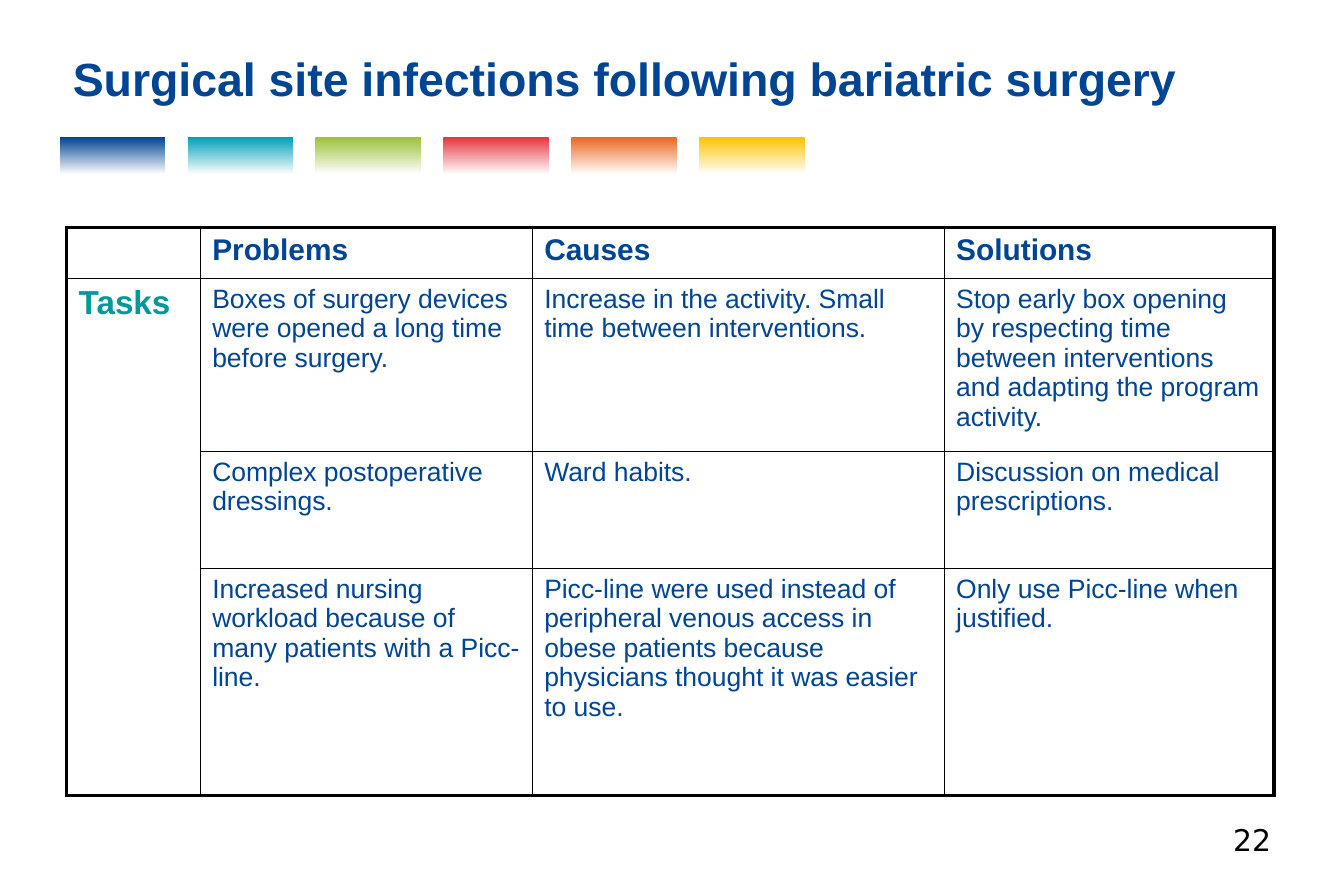
from pptx import Presentation
from pptx.dml.color import RGBColor
from pptx.enum.shapes import MSO_SHAPE
from pptx.enum.text import MSO_ANCHOR, PP_ALIGN
from pptx.oxml import parse_xml
from pptx.oxml.ns import nsdecls
from pptx.util import Cm, Pt

RECT = MSO_SHAPE.RECTANGLE
TOP, MIDDLE = MSO_ANCHOR.TOP, MSO_ANCHOR.MIDDLE
LEFT, RIGHT = PP_ALIGN.LEFT, PP_ALIGN.RIGHT

BLUE, TEAL, BLACK, WHITE = "004494", "009999", "000000", "FFFFFF"
SWATCHES = [BLUE, "009FBB", "9CC239", "E53540", "EA6721", "FDC300"]

TITLE = {"name": "Arial", "size": Pt(28), "bold": True}
HEADER = {"name": "Arial", "size": Pt(18), "bold": True}
TASKS = {"name": "Arial", "size": Pt(20), "bold": True}
BODY = {"name": "Arial", "size": Pt(16), "bold": False}
NUMBER = {"name": "DejaVu Sans", "size": Pt(18), "bold": False}

COL_WIDTHS = [2.84, 7.06, 8.76, 7.01]
ROW_HEIGHTS = [1.09, 3.68, 2.49, 4.83]
ROWS = [
    ["", "Problems", "Causes", "Solutions"],
    ["Tasks",
     "Boxes of surgery devices were opened a long time before surgery.",
     "Increase in the activity. Small time between interventions.",
     "Stop early box opening by respecting time between interventions "
     "and adapting the program activity."],
    ["", "Complex postoperative dressings.", "Ward habits.",
     "Discussion on medical prescriptions."],
    ["",
     "Increased nursing workload because of many patients with a Picc-line.",
     "Picc-line were used instead of peripheral venous access in obese "
     "patients because physicians thought it was easier to use.",
     "Only use Picc-line when justified."],
]
THIN, THICK = Pt(1), Pt(2.25)


def rgb(value):
    return RGBColor.from_string(value)


def write(tf, text, style, color, align=LEFT):
    p = tf.paragraphs[0]
    p.alignment = align
    r = p.add_run()
    r.text = text
    for name, value in style.items():
        setattr(r.font, name, value)
    r.font.color.rgb = rgb(color)


def add_text(s, box, text, style, color, align=LEFT, anchor=TOP):
    tf = s.shapes.add_textbox(*map(Cm, box)).text_frame
    tf.word_wrap = True
    tf.vertical_anchor = anchor
    write(tf, text, style, color, align)


def add_swatch(s, left, color):
    """Add a small bar that fades from the colour down to white."""
    sp = s.shapes.add_shape(RECT, Cm(left), Cm(2.92), Cm(2.24), Cm(0.79))
    sp.shadow.inherit = False
    sp.line.fill.background()
    sp.fill.gradient()
    sp.fill.gradient_angle = 270
    for stop, stop_color in zip(sp.fill.gradient_stops, (color, WHITE)):
        stop.color.rgb = rgb(stop_color)


def set_borders(cell, row, col):
    """Draw thick lines on the outer edge of the table, thin ones inside."""
    last_row = row + cell.span_height - 1
    outer = {
        "lnL": col == 0,
        "lnR": col == len(COL_WIDTHS) - 1,
        "lnT": row == 0,
        "lnB": last_row == len(ROWS) - 1,
    }
    tcPr = cell._tc.get_or_add_tcPr()
    for tag, is_outer in outer.items():
        tcPr.append(parse_xml(
            f'<a:{tag} {nsdecls("a")} w="{THICK if is_outer else THIN}">'
            f'<a:solidFill><a:srgbClr val="{BLACK}"/></a:solidFill></a:{tag}>'))


def add_findings_table(s):
    frame = s.shapes.add_table(len(ROWS), len(COL_WIDTHS), Cm(1.42), Cm(4.83),
                               Cm(sum(COL_WIDTHS)), Cm(sum(ROW_HEIGHTS)))
    table = frame.table
    table.first_row = table.horz_banding = False
    for column, width in zip(table.columns, COL_WIDTHS):
        column.width = Cm(width)
    for row, height in zip(table.rows, ROW_HEIGHTS):
        row.height = Cm(height)
    table.cell(1, 0).merge(table.cell(len(ROWS) - 1, 0))

    for i, texts in enumerate(ROWS):
        for j, text in enumerate(texts):
            cell = table.cell(i, j)
            if cell.is_spanned:
                continue
            set_borders(cell, i, j)
            cell.fill.solid()
            cell.fill.fore_color.rgb = rgb(WHITE)
            if text:
                style = HEADER if i == 0 else TASKS if j == 0 else BODY
                write(cell.text_frame, text, style, BLUE if j else TEAL)


def main():
    prs = Presentation()
    prs.slide_width, prs.slide_height = Cm(28.58), Cm(19.05)
    s = prs.slides.add_slide(prs.slide_layouts[6])
    for i, color in enumerate(SWATCHES):
        add_swatch(s, 1.27 + 2.72 * i, color)
    add_text(s, (1.3, 0.58, 25.98, 2.16),
             "Surgical site infections following bariatric surgery",
             TITLE, BLUE, anchor=MIDDLE)
    add_findings_table(s)
    add_text(s, (21.82, 17.35, 5.46, 1.27), "22", NUMBER, BLACK, RIGHT)
    prs.save("out.pptx")


if __name__ == "__main__":
    main()
